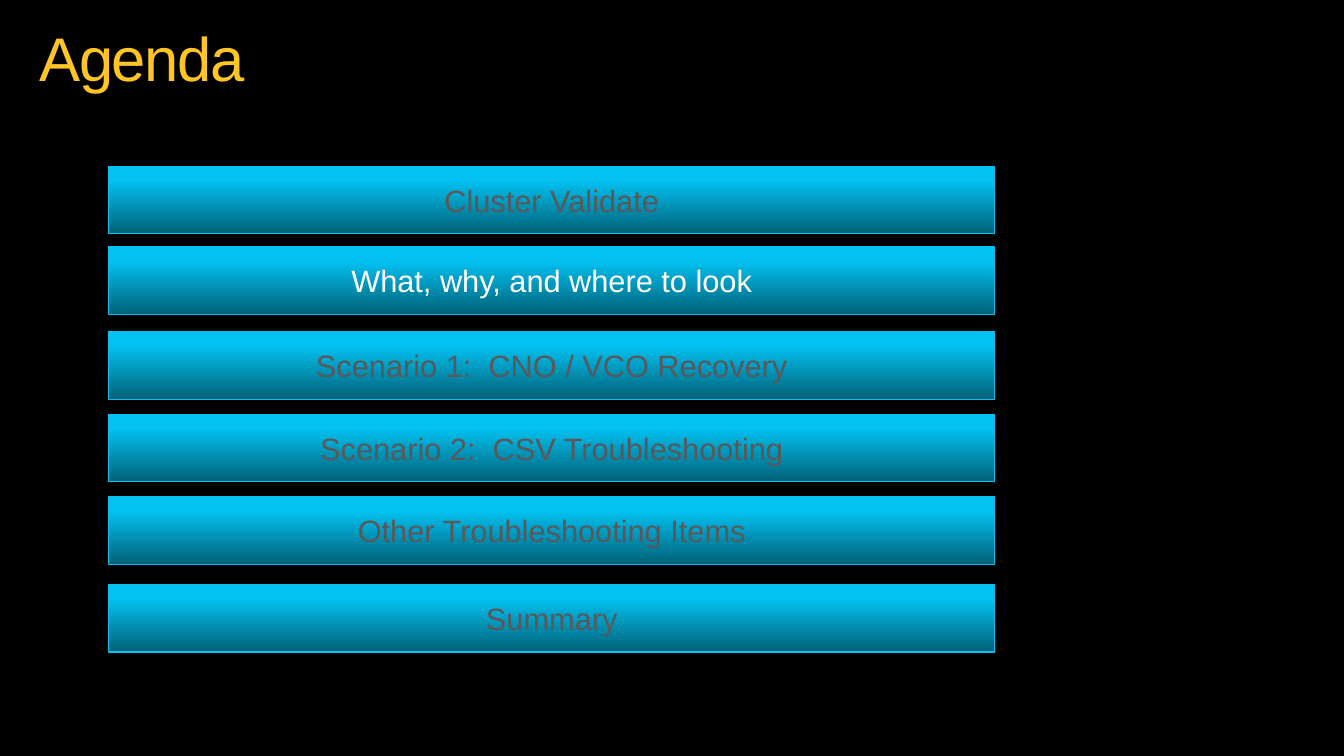
from copy import deepcopy

from pptx import Presentation
from pptx.dml.color import RGBColor
from pptx.enum import shapes, text
from pptx.oxml.ns import qn
from pptx.util import Cm, Pt

COLORS = {
    "background": "000000",
    "heading": "FFC425",
    "bar_dark": "016178",
    "bar_light": "03C2F1",
    "current": "FFFFFF",
    "dimmed": "59585A",
}
FONT = "Arial"
CURRENT_TOPIC = "What, why, and where to look"
AGENDA = [
    ("Cluster Validate", 4.19),
    (CURRENT_TOPIC, 6.22),
    ("Scenario 1:  CNO / VCO Recovery", 8.36),
    ("Scenario 2:  CSV Troubleshooting", 10.44),
    ("Other Troubleshooting Items", 12.52),
    ("Summary", 14.73),
]


def color(name):
    return RGBColor.from_string(COLORS[name])


def format_text(paragraph, size, color_name, alignment):
    paragraph.alignment = alignment
    paragraph.font.name = FONT
    paragraph.font.size = Pt(size)
    paragraph.font.color.rgb = color(color_name)


def set_heading(slide, wording):
    heading = slide.shapes.title
    heading.left, heading.top = Cm(0.99), Cm(0.43)
    heading.width, heading.height = Cm(25.91), Cm(2.26)
    frame = heading.text_frame
    frame.text = wording
    frame.auto_size = text.MSO_AUTO_SIZE.NONE
    frame.vertical_anchor = text.MSO_ANCHOR.MIDDLE
    frame.margin_left = frame.margin_right = 0
    frame.margin_top = frame.margin_bottom = 0
    paragraph = frame.paragraphs[0]
    paragraph.line_spacing = 0.9
    format_text(paragraph, 44, "heading", text.PP_ALIGN.LEFT)
    paragraph.runs[0].font._element.set("spc", "-100")


def fill_with_gradient(bar):
    bar.fill.gradient()
    bar.fill.gradient_angle = 90
    stops = bar._element.spPr.find(qn("a:gradFill")).find(qn("a:gsLst"))
    stops.append(deepcopy(stops[-1]))
    settings = [(0, "bar_dark"), (0.8, "bar_light"), (1, "bar_light")]
    for stop, (position, name) in zip(bar.fill.gradient_stops, settings):
        stop.position = position
        stop.color.rgb = color(name)


def add_topic_bar(slide, topic, top):
    bar = slide.shapes.add_shape(
        shapes.MSO_SHAPE.ROUNDED_RECTANGLE, Cm(2.74), Cm(top), Cm(22.33), Cm(1.7)
    )
    bar.adjustments[0] = 0
    bar.shadow.inherit = False
    fill_with_gradient(bar)
    bar.line.color.rgb = color("bar_light")
    bar.line.width = Pt(0.75)
    frame = bar.text_frame
    frame.word_wrap = True
    frame.vertical_anchor = text.MSO_ANCHOR.MIDDLE
    frame.text = topic
    shade = "current" if topic == CURRENT_TOPIC else "dimmed"
    format_text(frame.paragraphs[0], 22, shade, text.PP_ALIGN.CENTER)


def main():
    deck = Presentation()
    deck.slide_width, deck.slide_height = Cm(33.87), Cm(19.05)
    slide = deck.slides.add_slide(deck.slide_layouts.get_by_name("Title Only"))
    slide.background.fill.solid()
    slide.background.fill.fore_color.rgb = color("background")
    set_heading(slide, "Agenda")
    for topic, top in AGENDA:
        add_topic_bar(slide, topic, top)
    deck.save("out.pptx")


if __name__ == "__main__":
    main()
